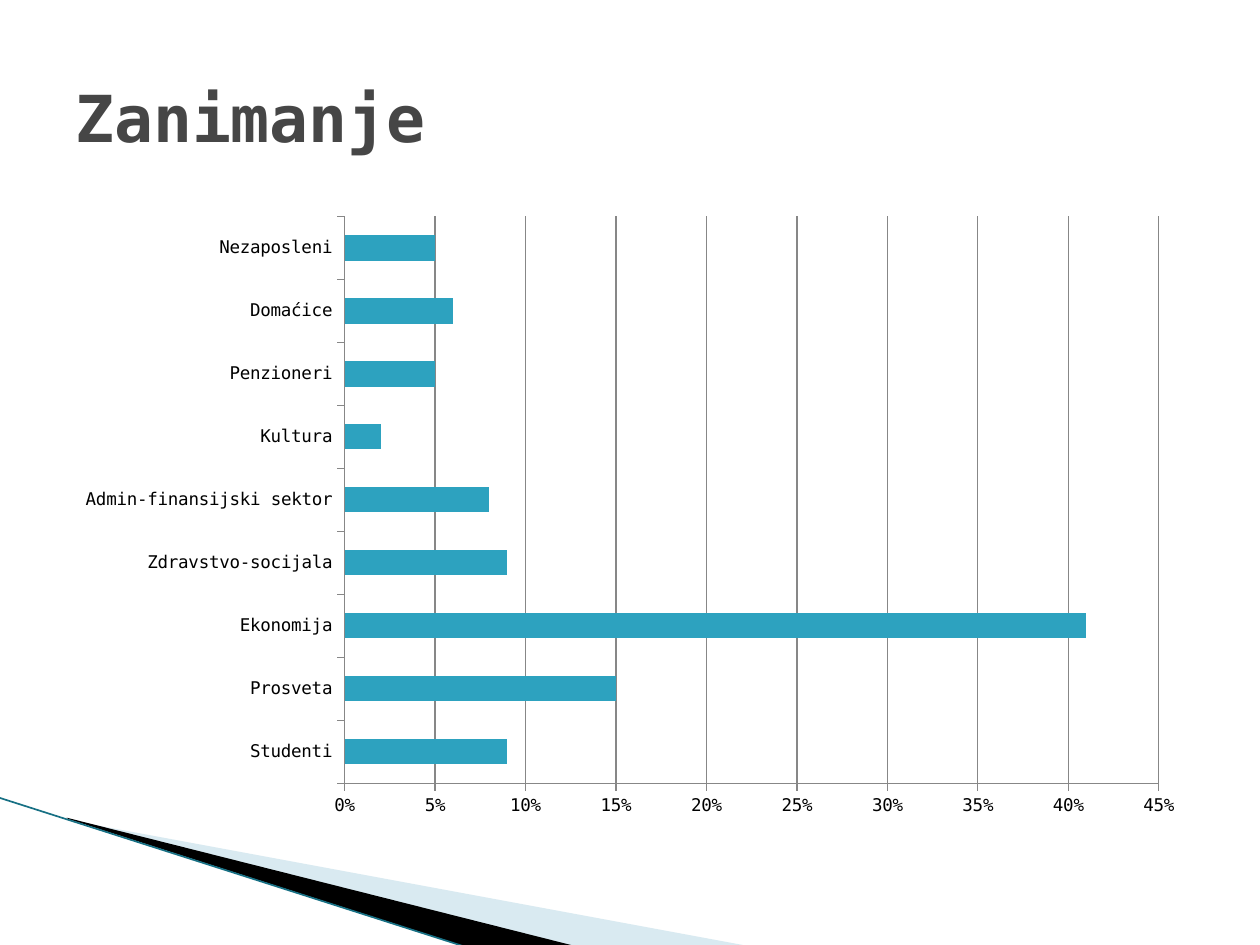
from lxml import etree
from pptx import Presentation
from pptx import util as u
from pptx.chart.data import CategoryChartData
from pptx.dml.color import RGBColor
from pptx.enum import chart as charts, shapes, text
from pptx.oxml.ns import qn

FONT = "DejaVu Sans Mono"
TITLE_GREY = RGBColor(0x46, 0x46, 0x46)
BLACK = RGBColor(0x00, 0x00, 0x00)
BAR_TEAL = RGBColor(0x2D, 0xA2, 0xBF)
LINE_TEAL = RGBColor(0x17, 0x70, 0x84)
PALE_BLUE = RGBColor(0xA0, 0xCB, 0xDC)
AXIS_GREY = RGBColor(0x87, 0x87, 0x87)

OCCUPATIONS = {
    "Studenti": 0.09,
    "Prosveta": 0.15,
    "Ekonomija": 0.41,
    "Zdravstvo-socijala": 0.09,
    "Admin-finansijski sektor": 0.08,
    "Kultura": 0.02,
    "Penzioneri": 0.05,
    "Domaćice": 0.06,
    "Nezaposleni": 0.05,
}


def add_wedge(page, left, top, points, color, opacity=100):
    """Draw a filled outline whose points are relative to left and top."""
    corners = [(u.Inches(left + x), u.Inches(top + y)) for x, y in points]
    builder = page.shapes.build_freeform(*corners[0])
    builder.add_line_segments(corners[1:], close=True)
    wedge = builder.convert_to_shape()
    wedge.shadow.inherit = False
    wedge.fill.solid()
    wedge.fill.fore_color.rgb = color
    wedge.line.fill.background()
    if opacity < 100:
        tint = wedge._element.spPr.find(qn("a:solidFill"))[0]
        etree.SubElement(tint, qn("a:alpha"), val=str(opacity * 1000))


def add_swoosh(page, left, top):
    """Draw the corner decoration from its top left point."""
    add_wedge(page, left, top,
              [(0.55, 0.18), (5.95, 1.18), (4.56, 1.18), (0.55, 0.17)],
              PALE_BLUE, 40)
    add_wedge(page, left, top,
              [(0.53, 0.16), (4.57, 1.18), (3.72, 1.19), (0.54, 0.17)], BLACK)
    edge = page.shapes.add_connector(
        shapes.MSO_CONNECTOR.STRAIGHT,
        u.Inches(left - 0.01), u.Inches(top),
        u.Inches(left + 3.71), u.Inches(top + 1.19))
    edge.line.color.rgb = LINE_TEAL
    edge.line.width = u.Pt(0.95)
    etree.SubElement(edge._element.spPr, qn("a:effectLst"))


def add_title(page, left, top, width, height):
    """Place the slide title in the given box."""
    box = page.shapes.add_textbox(*map(u.Inches, (left, top, width, height)))
    frame = box.text_frame
    frame.word_wrap = True
    frame.vertical_anchor = text.MSO_ANCHOR.MIDDLE
    para = frame.paragraphs[0]
    para.text = "Zanimanje"
    para.font.name = FONT
    para.font.size = u.Pt(37)
    para.font.bold = True
    para.font.color.rgb = TITLE_GREY


def add_occupation_chart(page, left, top, width, height):
    """Place the bar chart of occupations in the given box."""
    data = CategoryChartData(number_format="0%")
    data.categories = list(OCCUPATIONS)
    data.add_series("Series 1", list(OCCUPATIONS.values()))
    chart = page.shapes.add_chart(
        charts.XL_CHART_TYPE.BAR_CLUSTERED,
        *map(u.Inches, (left, top, width, height)), data).chart
    chart.has_legend = False
    chart.has_title = False
    chart.font.name = FONT
    chart.font.size = u.Pt(10)
    chart.font.color.rgb = BLACK

    plot = chart.plots[0]
    plot.gap_width = 150
    plot.vary_by_categories = False
    bars = plot.series[0].format.fill
    bars.solid()
    bars.fore_color.rgb = BAR_TEAL

    values = chart.value_axis
    values.minimum_scale = 0
    values.maximum_scale = 0.45
    values.major_unit = 0.05
    values.tick_labels.number_format = "0%"
    values.tick_labels.number_format_is_linked = False
    values.has_major_gridlines = True
    values.major_gridlines.format.line.color.rgb = AXIS_GREY
    chart.category_axis.has_major_gridlines = False
    for axis in (values, chart.category_axis):
        axis.major_tick_mark = charts.XL_TICK_MARK.OUTSIDE
        axis.minor_tick_mark = charts.XL_TICK_MARK.NONE
        axis.format.line.color.rgb = AXIS_GREY


def main():
    """Build the slide and save the deck."""
    deck = Presentation()
    deck.slide_width = u.Inches(10)
    deck.slide_height = u.Inches(7.5)
    page = deck.slides.add_slide(deck.slide_layouts[6])
    add_swoosh(page, 0, 6.33)
    add_title(page, 0.5, 0.3, 9, 1.25)
    add_occupation_chart(page, 0.5, 1.62, 9, 4.95)
    deck.save("out.pptx")


if __name__ == "__main__":
    main()
